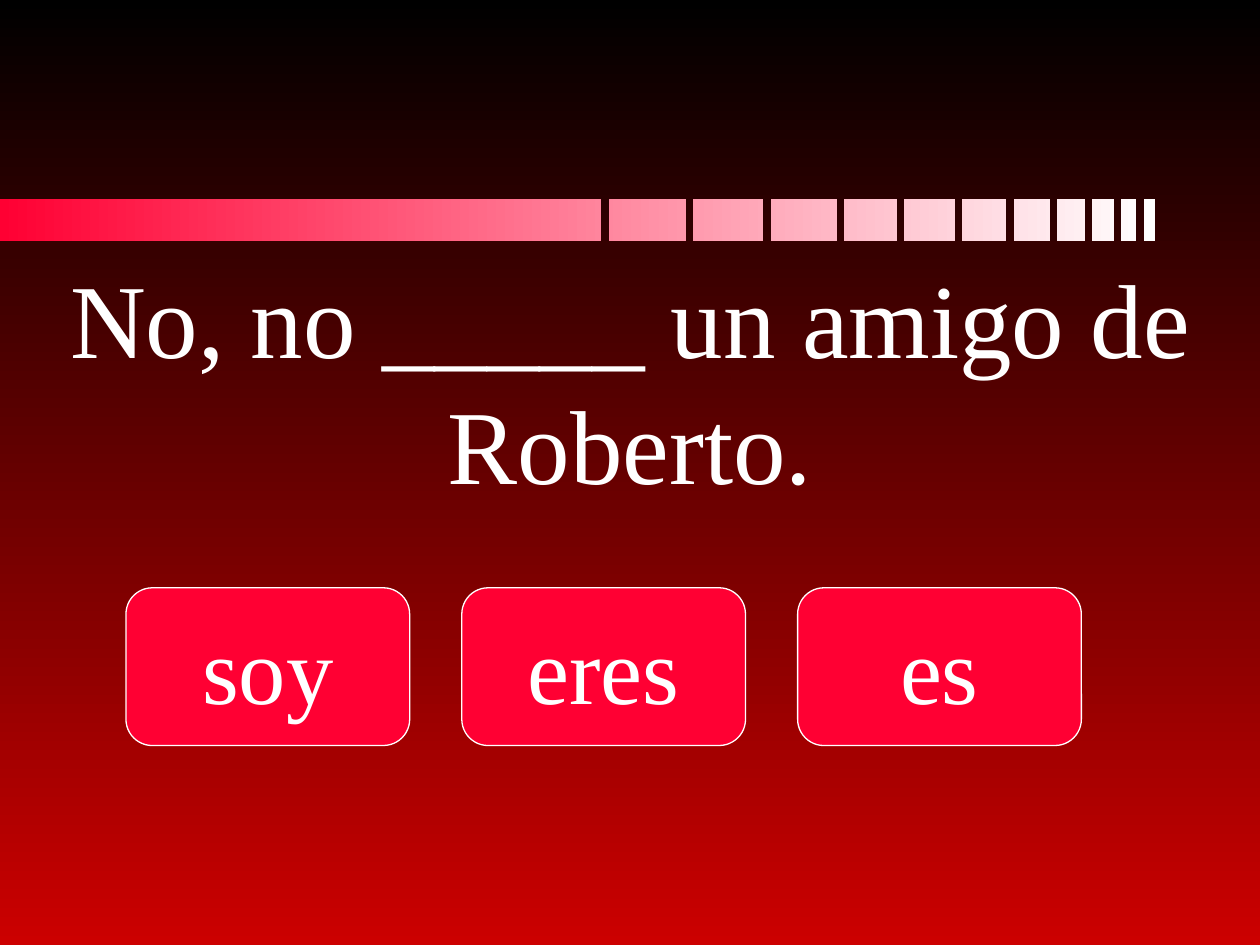
from pptx import Presentation
from pptx.dml.color import RGBColor
from pptx.enum import shapes, text
from pptx.util import Cm, Pt

QUESTION = "No, no _____ un amigo de Roberto."
ANSWERS = ["soy", "eres", "es"]
GAP_LEFTS = [12.12, 13.82, 15.39, 16.87, 18.08, 19.25,
             20.29, 21.16, 21.87, 22.45, 22.91]

THEME = {
    "font": "Times New Roman",
    "ink": "FFFFFF",
    "button": "FF0033",
    "backdrop": ("000000", "CC0000"),
    "stripe": ("FF0033", "FFFFFF"),
    "question_size": 60,
    "answer_size": 54,
    "border": 0.75,
}
SLIDE_SIZE = (25.4, 19.05)
STRIPE_TOP, STRIPE_WIDTH, STRIPE_HEIGHT, GAP_WIDTH = 4.02, 23.28, 0.84, 0.15
QUESTION_BOX = (0, 7.19, 25.4, 3.12)
BUTTON_LEFT, BUTTON_TOP, BUTTON_PITCH = 2.54, 11.85, 6.77
BUTTON_SIZE = (5.72, 3.18)


def rgb(value):
    return RGBColor.from_string(value)


def blend(fill, colors, angle):
    fill.gradient()
    fill.gradient_angle = angle
    for stop, color, position in zip(fill.gradient_stops, colors, (0, 1)):
        stop.color.rgb = rgb(color)
        stop.position = position


def block(slide, preset, box):
    piece = slide.shapes.add_shape(preset, *map(Cm, box))
    piece.shadow.inherit = False
    return piece


def write(holder, words, size, frame_format):
    frame = holder.text_frame
    for name, value in frame_format.items():
        setattr(frame, name, value)
    line = frame.paragraphs[0]
    line.alignment = text.PP_ALIGN.CENTER
    run = line.add_run()
    run.text = words
    for name, value in {"name": THEME["font"], "size": Pt(size)}.items():
        setattr(run.font, name, value)
    run.font.color.rgb = rgb(THEME["ink"])


def add_stripe(slide):
    rectangle = shapes.MSO_SHAPE.RECTANGLE
    stripe = block(slide, rectangle, (0, STRIPE_TOP, STRIPE_WIDTH, STRIPE_HEIGHT))
    blend(stripe.fill, THEME["stripe"], 0)
    stripe.line.fill.background()
    for left in GAP_LEFTS:
        gap = block(slide, rectangle, (left, STRIPE_TOP, GAP_WIDTH, STRIPE_HEIGHT))
        gap.line.fill.background()
        gap.element.set("useBgFill", "1")


def add_answers(slide):
    for index, answer in enumerate(ANSWERS):
        left = BUTTON_LEFT + index * BUTTON_PITCH
        button = block(slide, shapes.MSO_SHAPE.ROUNDED_RECTANGLE,
                       (left, BUTTON_TOP, *BUTTON_SIZE))
        button.fill.solid()
        button.fill.fore_color.rgb = rgb(THEME["button"])
        button.line.color.rgb = rgb(THEME["ink"])
        button.line.width = Pt(THEME["border"])
        write(button, answer, THEME["answer_size"],
              {"word_wrap": False, "vertical_anchor": text.MSO_ANCHOR.MIDDLE})


def main():
    deck = Presentation()
    deck.slide_width, deck.slide_height = map(Cm, SLIDE_SIZE)
    slide = deck.slides.add_slide(deck.slide_layouts[6])
    blend(slide.background.fill, THEME["backdrop"], 270)
    add_stripe(slide)
    question = slide.shapes.add_textbox(*map(Cm, QUESTION_BOX))
    write(question, QUESTION, THEME["question_size"],
          {"word_wrap": True, "vertical_anchor": text.MSO_ANCHOR.BOTTOM})
    add_answers(slide)
    deck.save("out.pptx")


if __name__ == "__main__":
    main()
